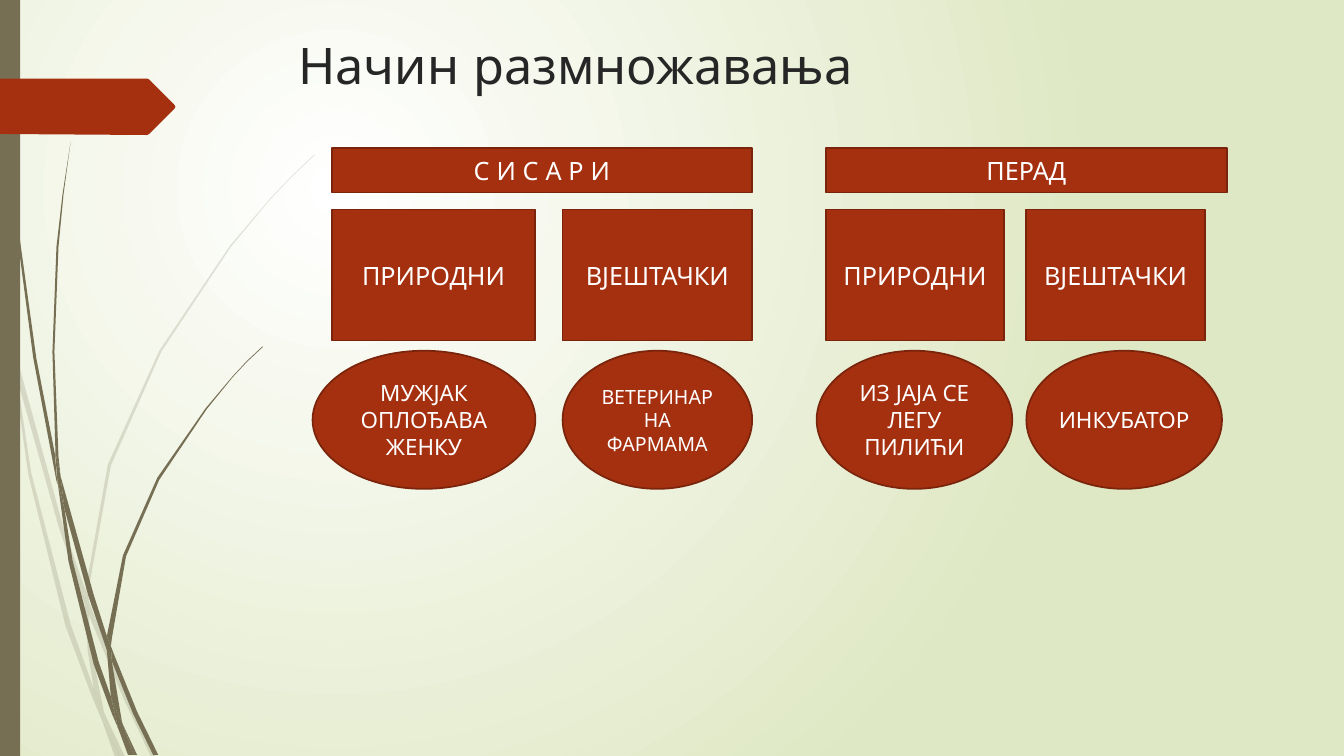
"""Builds a slide that compares how mammals and poultry reproduce."""
from dataclasses import dataclass

from lxml import etree
from pptx import Presentation
from pptx.dml.color import RGBColor
from pptx.enum.shapes import MSO_SHAPE
from pptx.enum.text import MSO_ANCHOR, MSO_AUTO_SIZE, PP_ALIGN
from pptx.oxml.ns import qn
from pptx.shapes.base import BaseShape
from pptx.slide import Slide
from pptx.text.text import TextFrame
from pptx.util import Inches, Pt

RECT, OVAL = MSO_SHAPE.RECTANGLE, MSO_SHAPE.OVAL
TOP, MIDDLE = MSO_ANCHOR.TOP, MSO_ANCHOR.MIDDLE
LEFT, CENTER = PP_ALIGN.LEFT, PP_ALIGN.CENTER
FIXED = MSO_AUTO_SIZE.NONE
FONT = "Quicksand"
RUST, EDGE, MOSS = "A53010", "7A240C", "766F54"
WHITE, LIME, INK = "FFFFFF", "DFE8C4", "262626"
TITLE_ONLY = 5

Point = tuple[float, float]
Outline = list[Point]


@dataclass
class Cell:
    """A box within a row."""
    text: str
    left: float
    width: float
    size: int = 18
    inset: float = 0.1


@dataclass
class Row:
    """Boxes that share a shape, top and height."""
    form: MSO_SHAPE
    top: float
    height: float
    cells: list[Cell]


@dataclass
class Clump:
    """Grass blades of one opacity, in percent."""
    alpha: int
    blades: list[Outline]


ROWS = [
    Row(RECT, 1.47, 0.44, [
        Cell("С И С А Р И", 3.29, 4.17),
        Cell("ПЕРАД", 8.19, 3.98)]),
    Row(RECT, 2.08, 1.3, [
        Cell("ПРИРОДНИ", 3.29, 2.02),
        Cell("ВЈЕШТАЧКИ", 5.58, 1.88),
        Cell("ПРИРОДНИ", 8.19, 1.77),
        Cell("ВЈЕШТАЧКИ", 10.18, 1.77)]),
    Row(OVAL, 3.48, 1.37, [
        Cell("МУЖЈАК ОПЛОЂАВА ЖЕНКУ", 3.1, 2.21, 16),
        Cell("ВЕТЕРИНАР НА ФАРМАМА", 5.58, 1.88, 14),
        Cell("ИЗ ЈАЈА СЕ ЛЕГУ ПИЛИЋИ", 8.1, 1.94, 16),
        Cell("ИНКУБАТОР", 10.18, 1.94, 16, 0)]),
]

PALE = Clump(20, [
    [(0.11, 3.5), (0.09, 3.22), (0, 2.82), (0, 2.99), (0.1, 3.44)],
    [(0.58, 5.22), (0.84, 5.99), (0.85, 5.86), (0.62, 5.2), (0.14, 3.45),
     (0.17, 3.76)],
    [(0.92, 6.07), (0.88, 5.96), (0.88, 6.1), (1.23, 6.94), (1.5, 7.51),
     (1.55, 7.51), (1.27, 6.92)],
    [(1.19, 7.51), (1.24, 7.51), (1.05, 7.11)],
    [(0.93, 6.83), (0.7, 6.19), (0.31, 4.69), (0.17, 3.76), (0.11, 3.5),
     (0.28, 4.7), (0.65, 6.21), (0.92, 6.93), (1.01, 7.14), (0.99, 7.07)],
    [(0.84, 5.99), (0.87, 6.46), (0.93, 6.83), (0.96, 6.92), (1.05, 7.11),
     (1.03, 7.06), (0.91, 6.46), (0.88, 6.1), (0.88, 6.08)],
    [(0.88, 5.84), (1.1, 4.62), (1.6, 3.49), (2.29, 2.45), (2.68, 1.98),
     (2.9, 1.75), (3.12, 1.54), (3.12, 1.53), (2.89, 1.75), (2.68, 1.97),
     (2.28, 2.44), (1.58, 3.48), (1.07, 4.61), (0.85, 5.84), (0.85, 5.86),
     (0.88, 5.96)],
    [(1.01, 7.14), (1.14, 7.51), (1.19, 7.51)],
    [(0.88, 6.08), (0.88, 6.1), (0.88, 5.96), (0.85, 5.86), (0.84, 5.99)],
    [(0.96, 6.92), (0.93, 6.83), (0.99, 7.07), (1.01, 7.14), (1.19, 7.51),
     (1.05, 7.11)],
])

DARK = Clump(100, [
    [(0.07, 1.1), (0.17, 2.33), (0.33, 3.55), (0.56, 4.77), (0.57, 4.81),
     (0.55, 4.57), (0.55, 4.53), (0.36, 3.55), (0.19, 2.32), (0.08, 1.09),
     (0.05, 0.48), (0.04, 0), (0.03, 0), (0.04, 0.48)],
    [(0.88, 5.92), (1.06, 6.45), (1.06, 6.33), (1.06, 6.31), (0.93, 5.9),
     (0.6, 4.72), (0.64, 5.05)],
    [(1.13, 6.49), (1.1, 6.41), (1.11, 6.56), (1.32, 7.08), (1.52, 7.49),
     (1.57, 7.49), (1.36, 7.06)],
    [(1.1, 6.91), (0.98, 6.57), (0.72, 5.56), (0.64, 5.05), (0.57, 4.77),
     (0.68, 5.57), (0.93, 6.59), (1.11, 7.08), (1.17, 7.22), (1.16, 7.17)],
    [(0.6, 4.72), (0.58, 4.53), (0.54, 3.49), (0.58, 2.45), (0.63, 1.93),
     (0.7, 1.41), (0.62, 1.93), (0.56, 2.45), (0.52, 3.49), (0.55, 4.49)],
    [(1.33, 7.49), (1.36, 7.49), (1.22, 7.19)],
    [(0.57, 4.77), (0.64, 5.05), (0.6, 4.72), (0.55, 4.49), (0.55, 4.53)],
    [(1.11, 6.33), (1.25, 5.52), (1.58, 4.76), (2.05, 4.06), (2.31, 3.74),
     (2.45, 3.59), (2.61, 3.44), (2.6, 3.44), (2.45, 3.58), (2.31, 3.73),
     (2.04, 4.05), (1.56, 4.74), (1.22, 5.51), (1.06, 6.31), (1.1, 6.41)],
    [(1.17, 7.22), (1.27, 7.49), (1.31, 7.49)],
    [(1.06, 6.45), (1.1, 6.91), (1.16, 7.06), (1.22, 7.19), (1.21, 7.16),
     (1.11, 6.56), (1.09, 6.51)],
    [(1.06, 6.45), (1.09, 6.51), (1.11, 6.56), (1.1, 6.41), (1.06, 6.31),
     (1.06, 6.33)],
    [(1.16, 7.06), (1.1, 6.91), (1.16, 7.17), (1.17, 7.22), (1.3, 7.49),
     (1.33, 7.49), (1.22, 7.19)],
])

TAG = [(1.73, 1.08), (1.48, 1.33), (1.46, 1.34), (0, 1.33), (0, 0.78),
       (1.46, 0.78), (1.48, 0.79), (1.73, 1.04), (1.74, 1.06)]


def color(code: str) -> RGBColor:
    return RGBColor.from_string(code)


def paint(shape: BaseShape, fill: str, edge: str = "") -> None:
    shape.shadow.inherit = False
    shape.fill.solid()
    shape.fill.fore_color.rgb = color(fill)
    if edge:
        shape.line.color.rgb = color(edge)
        shape.line.width = Pt(1.25)
    else:
        shape.line.fill.background()


def write(frame: TextFrame, text: str, size: int, ink: str,
          align: PP_ALIGN, anchor: MSO_ANCHOR) -> None:
    frame.text = text
    frame.word_wrap = True
    frame.auto_size = FIXED
    frame.vertical_anchor = anchor
    line = frame.paragraphs[0]
    line.alignment = align
    font = line.runs[0].font
    font.name, font.size, font.color.rgb = FONT, Pt(size), color(ink)


def draw_path(shapes, points: Outline, fill: str) -> BaseShape:
    spots = [(Inches(x), Inches(y)) for x, y in points]
    pen = shapes.build_freeform(*spots[0])
    pen.add_line_segments(spots[1:], close=True)
    shape = pen.convert_to_shape()
    paint(shape, fill)
    return shape


def draw_clump(slide: Slide, clump: Clump) -> None:
    group = slide.shapes.add_group_shape()
    for points in clump.blades:
        blade = draw_path(group.shapes, points, MOSS)
        if clump.alpha < 100:
            tint = blade.element.spPr.find(".//" + qn("a:srgbClr"))
            etree.SubElement(tint, qn("a:alpha"), val=str(clump.alpha * 1000))


def draw_row(slide: Slide, row: Row) -> None:
    for cell in row.cells:
        box = slide.shapes.add_shape(
            row.form, Inches(cell.left), Inches(row.top),
            Inches(cell.width), Inches(row.height))
        paint(box, RUST, EDGE)
        frame = box.text_frame
        frame.margin_left = frame.margin_right = Inches(cell.inset)
        write(frame, cell.text, cell.size, WHITE, CENTER, MIDDLE)


def draw_back(slide: Slide) -> None:
    fill = slide.background.fill
    fill.gradient()
    for stop, code, place in zip(fill.gradient_stops, (WHITE, LIME), (0, 1)):
        stop.color.rgb, stop.position = color(code), place
    grad = slide.element.find(".//" + qn("a:gradFill"))
    grad.remove(grad.find(qn("a:lin")))
    glow = etree.SubElement(grad, qn("a:path"), {"path": "circle"})
    etree.SubElement(glow, qn("a:fillToRect"),
                     l="50000", t="50000", r="100000", b="100000")


def main() -> None:
    deck = Presentation()
    deck.slide_width, deck.slide_height = Inches(13.33), Inches(7.5)
    slide = deck.slides.add_slide(deck.slide_layouts[TITLE_ONLY])
    draw_back(slide)
    for clump in (PALE, DARK):
        draw_clump(slide, clump)
    bar = slide.shapes.add_shape(RECT, 0, 0, Inches(0.2), Inches(7.5))
    paint(bar, MOSS)
    draw_path(slide.shapes, TAG, RUST)
    title = slide.shapes.title
    title.left, title.top = Inches(2.86), Inches(0.29)
    title.width, title.height = Inches(9.75), Inches(1.4)
    write(title.text_frame, "Начин размножавања", 36, INK, LEFT, TOP)
    for row in ROWS:
        draw_row(slide, row)
    deck.save("out.pptx")


if __name__ == "__main__":
    main()
